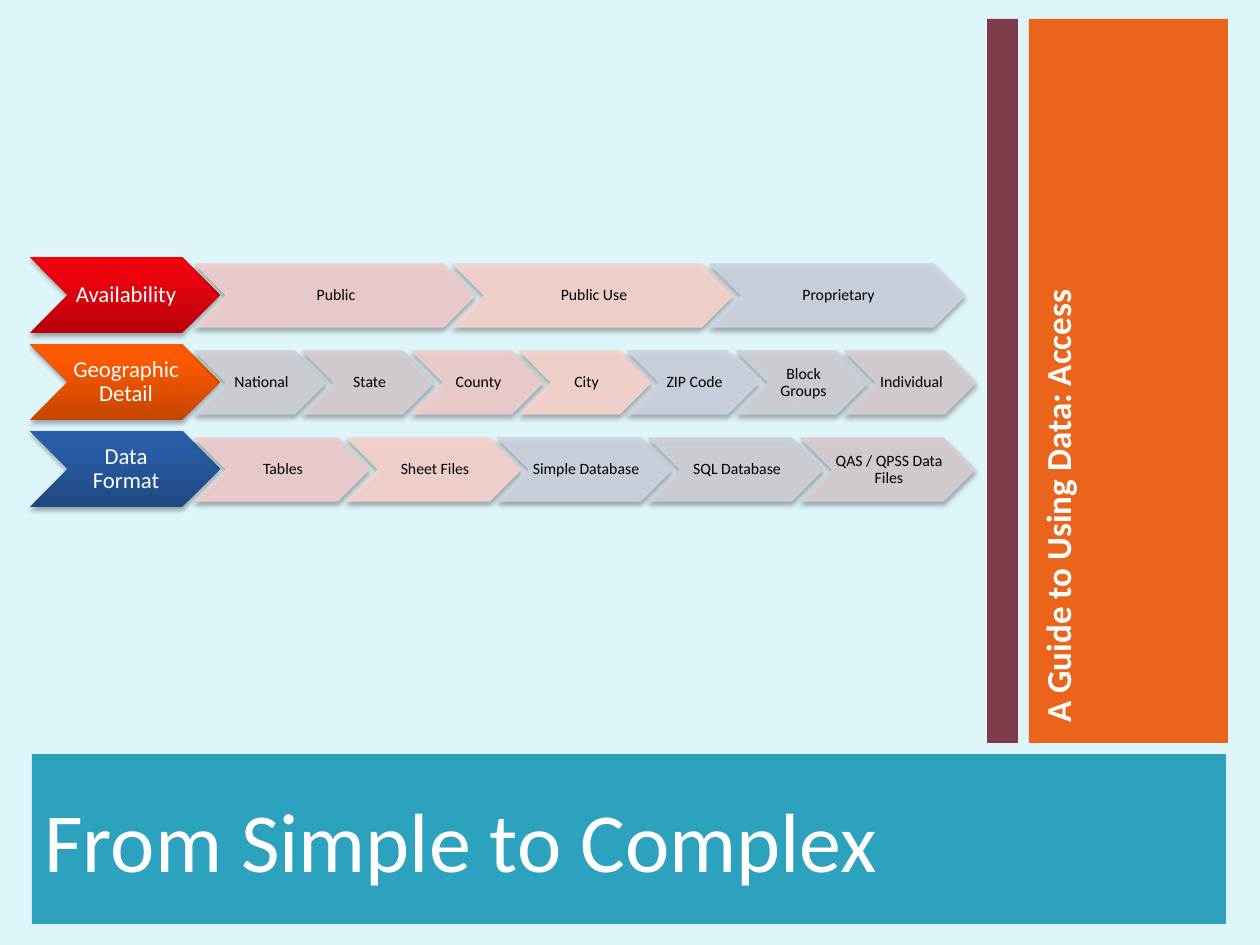
from dataclasses import dataclass
from itertools import cycle

from lxml.etree import SubElement
from pptx import Presentation
from pptx.dml.color import RGBColor as Rgb
from pptx.enum.shapes import MSO_SHAPE as Shape
from pptx.enum.text import MSO_ANCHOR as Anchor, PP_ALIGN as Align
from pptx.oxml.ns import qn
from pptx.util import Pt


@dataclass(frozen=True)
class Theme:
    font: str = "Calibri"
    # Colours
    backdrop: str = "DEF5FA"
    stripe: str = "7D3C4A"
    side: str = "EB641B"
    banner: str = "2DA2BF"
    light: str = "FFFFFF"
    dark: str = "000000"
    stages: tuple = ("F1CDCD", "F7D3CD", "CED3DF", "CFD0D6", "D7CED0")
    # Type sizes in points
    title: int = 48
    guide: int = 20
    topic: int = 13
    stage: int = 9


class Canvas:
    def __init__(self, deck, theme):
        self.theme = theme
        self.slide = deck.slides.add_slide(deck.slide_layouts[6])
        ground = self.slide.background.fill
        ground.solid()
        ground.fore_color.rgb = Rgb.from_string(theme.backdrop)

    @staticmethod
    def emu(px):
        return px * 914400 // 126

    def shape(self, kind, box):
        shape = self.slide.shapes.add_shape(kind, *map(self.emu, box))
        shape.shadow.inherit = False
        shape.line.fill.background()
        return shape

    def block(self, box, colour):
        block = self.shape(Shape.RECTANGLE, box)
        block.fill.solid()
        block.fill.fore_color.rgb = Rgb.from_string(colour)
        return block

    def label(self, shape, text, size, colour, frame_format,
              bold=False, **paragraph_format):
        frame = shape.text_frame
        for name, value in {"word_wrap": True, **frame_format}.items():
            setattr(frame, name, value)
        paragraph = frame.paragraphs[0]
        for name, value in paragraph_format.items():
            setattr(paragraph, name, value)
        run = paragraph.add_run()
        run.text = text
        run.font.color.rgb = Rgb.from_string(colour)
        for name, value in {"name": self.theme.font, "size": Pt(size),
                            "bold": bold}.items():
            setattr(run.font, name, value)

    def vertical_text(self, box, text):
        guide = self.slide.shapes.add_textbox(*map(self.emu, box))
        guide.rotation = 270
        self.label(guide, text, self.theme.guide, self.theme.light,
                   {"vertical_anchor": Anchor.TOP}, bold=True, alignment=Align.LEFT)

    def chevron(self, box, text, size, colour):
        chevron = self.shape(Shape.CHEVRON, box)
        inset = {"margin_left": self.emu(2), "margin_right": 0,
                 "margin_top": self.emu(1), "margin_bottom": self.emu(1),
                 "vertical_anchor": Anchor.MIDDLE}
        self.label(chevron, text, size, colour, inset,
                   alignment=Align.CENTER, line_spacing=0.9)
        return chevron

    def drop_shadow(self, shape):
        effects = shape.element.spPr.find(qn("a:effectLst"))
        shadow = SubElement(effects, qn("a:outerShdw"), blurRad=str(Pt(3.1)),
                            dist=str(Pt(1.8)), dir="5400000", rotWithShape="0")
        black = SubElement(shadow, qn("a:srgbClr"), val=self.theme.dark)
        SubElement(black, qn("a:alpha"), val="35000")

    def topic(self, box, text, shades):
        topic = self.chevron(box, text, self.theme.topic, self.theme.light)
        topic.fill.gradient()
        topic.fill.gradient_angle = 90
        stops = topic.element.spPr.find(".//" + qn("a:gsLst"))
        stops.clear()
        for position, shade in zip((0, 80000, 100000), shades):
            stop = SubElement(stops, qn("a:gs"), pos=str(position))
            SubElement(stop, qn("a:srgbClr"), val=shade)
        self.drop_shadow(topic)

    def stage(self, box, text, colour):
        stage = self.chevron(box, text, self.theme.stage, self.theme.dark)
        for paint in (stage.fill, stage.line.fill):
            paint.solid()
            paint.fore_color.rgb = Rgb.from_string(colour)
        stage.line.width = Pt(0.75)
        for tint in stage.element.spPr.iter(qn("a:srgbClr")):
            SubElement(tint, qn("a:alpha"), val="90000")
        self.drop_shadow(stage)


# Topic, gradient shades, left of last stage, stage width, last width, stages
TOPICS = (
    ("Availability", ("B8020B", "EE030E", "F2000C"), 710, 280, 255,
     ("Public", "Public Use", "Proprietary")),
    ("Geographic Detail", ("C44500", "FE5900", "FF5A00"), 845, 131, 131,
     ("National", "State", "County", "City", "ZIP Code", "Block Groups",
      "Individual")),
    ("Data Format", ("1F4880", "295EA7", "265EAA"), 801, 174, 174,
     ("Tables", "Sheet Files", "Simple Database", "SQL Database",
      "QAS / QPSS Data Files")),
)
FIRST_STAGE, FIRST_ROW, ROW_PITCH = 195, 257, 87


def main():
    deck = Presentation()
    deck.slide_width, deck.slide_height = Canvas.emu(1260), Canvas.emu(945)
    theme = Theme()
    canvas = Canvas(deck, theme)

    # Side panel and title banner
    canvas.block((987, 19, 31, 724), theme.stripe)
    canvas.block((1029, 19, 199, 724), theme.side)
    banner = canvas.block((32, 754, 1194, 170), theme.banner)
    canvas.label(banner, "From Simple to Complex", theme.title, theme.light,
                 {"vertical_anchor": Anchor.MIDDLE}, alignment=Align.LEFT)
    canvas.vertical_text((741, 310, 714, 136), "A Guide to Using Data: Access")

    # Chevron rows, with stage colours running on from row to row
    colours = cycle(theme.stages)
    for row, (topic, shades, last_left, width, last_width, stages) in enumerate(TOPICS):
        top = FIRST_ROW + row * ROW_PITCH
        canvas.topic((30, top, 190, 76), topic, shades)
        last = len(stages) - 1
        for step, stage in enumerate(stages):
            left = FIRST_STAGE + round(step * (last_left - FIRST_STAGE) / last)
            stage_width = last_width if step == last else width
            canvas.stage((left, top + 7, stage_width, 63), stage, next(colours))

    deck.save("out.pptx")


if __name__ == "__main__":
    main()
